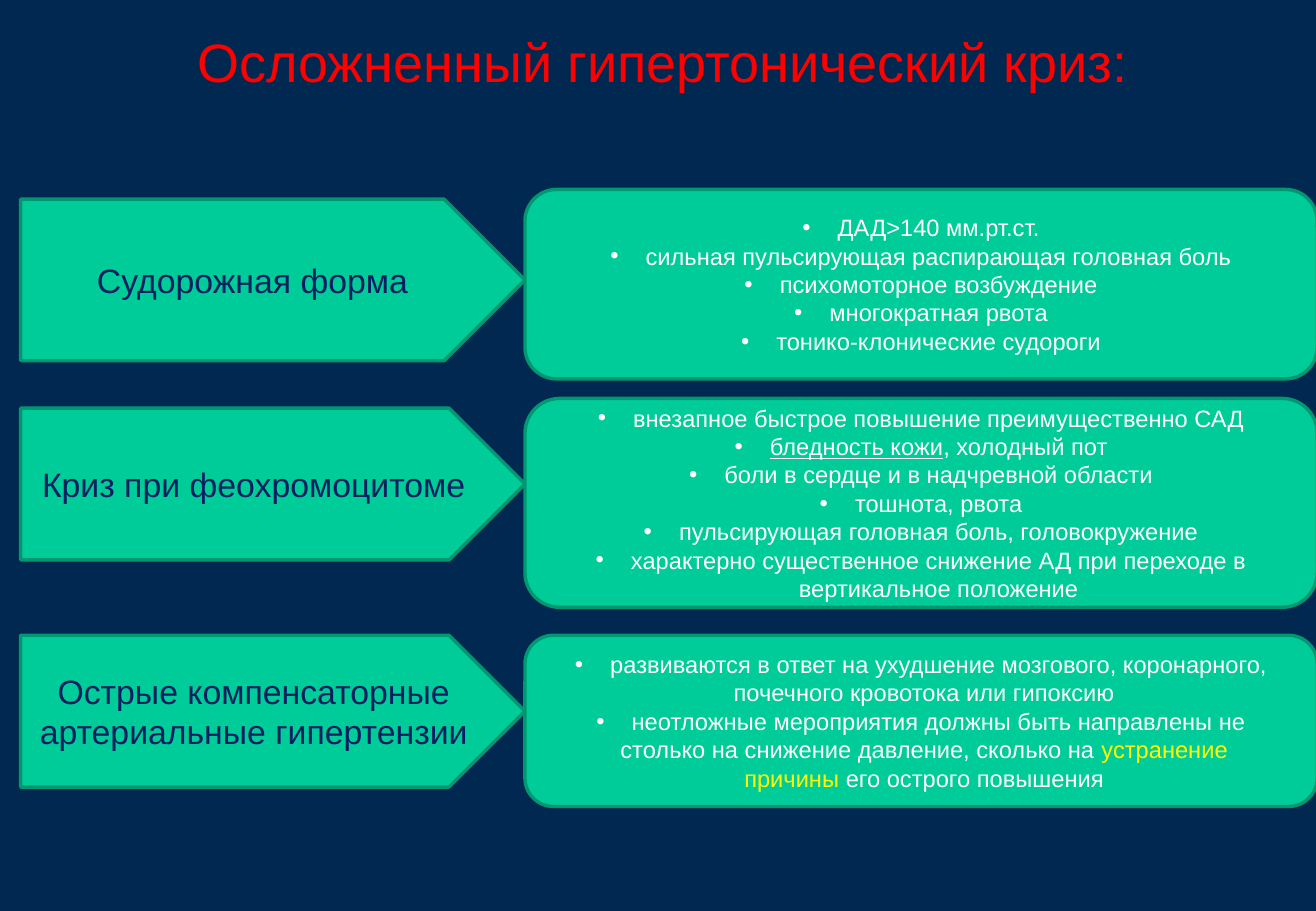
from dataclasses import dataclass

from lxml import etree
from pptx import Presentation
from pptx.dml.color import RGBColor
from pptx.enum.shapes import MSO_SHAPE
from pptx.enum.text import MSO_ANCHOR, PP_ALIGN
from pptx.oxml.ns import qn
from pptx.util import Inches, Pt

PENTAGON = MSO_SHAPE.PENTAGON
ROUNDED = MSO_SHAPE.ROUNDED_RECTANGLE
MIDDLE = MSO_ANCHOR.MIDDLE
CENTER = PP_ALIGN.CENTER

COLORS = {
    "background": "002850",
    "title": "FF0000",
    "fill": "00CC99",
    "outline": "009771",
    "label": "002060",
    "detail": "FFFFFF",
    "accent": "FFFF00",
}
FONT = "Arial"
LABEL_LEFT, LABEL_WIDTH = 0.17, 4.15
DETAIL_LEFT, DETAIL_WIDTH = LABEL_LEFT + LABEL_WIDTH, 6.52
BULLET_INDENT, CONTINUED_INDENT = 0.29, 0.05


@dataclass(frozen=True)
class Span:
    text: str
    color: str = "detail"
    underline: bool = False


@dataclass(frozen=True)
class Line:
    spans: tuple[Span, ...]
    bullet: bool = True


@dataclass(frozen=True)
class CrisisForm:
    name: str
    label_top: float
    label_height: float
    detail_top: float
    detail_height: float
    lines: tuple[Line, ...]


def plain(text: str, bullet: bool = True) -> Line:
    return Line((Span(text),), bullet)


FORMS = (
    CrisisForm("Судорожная форма", 1.64, 1.33, 1.56, 1.56, (
        plain("ДАД>140 мм.рт.ст."),
        plain("сильная пульсирующая распирающая головная боль"),
        plain("психомоторное возбуждение"),
        plain("многократная рвота"),
        plain("тонико-клонические судороги"),
    )),
    CrisisForm("Криз при феохромоцитоме", 3.36, 1.25, 3.28, 1.72, (
        plain("внезапное быстрое повышение преимущественно САД"),
        Line((Span("бледность кожи", underline=True), Span(", холодный пот"))),
        plain("боли в сердце и в надчревной области"),
        plain("тошнота, рвота"),
        plain("пульсирующая головная боль, головокружение"),
        plain("характерно существенное снижение АД при переходе в вертикальное положение"),
    )),
    CrisisForm("Острые компенсаторные артериальные гипертензии", 5.23, 1.25, 5.23, 1.41, (
        plain("развиваются в ответ на ухудшение мозгового, коронарного,"),
        plain("почечного кровотока или гипоксию", bullet=False),
        plain("неотложные мероприятия должны быть направлены не"),
        Line((Span("столько на снижение давление, сколько на "),
              Span("устранение", "accent")), bullet=False),
        Line((Span("причины", "accent"), Span(" его острого повышения")), bullet=False),
    )),
)


def rgb(name: str) -> RGBColor:
    return RGBColor.from_string(COLORS[name])


def add_text(para, text: str, *, size: float, color: str, underline: bool = False) -> None:
    para.alignment = CENTER
    run = para.add_run()
    run.text = text
    run.font.name = FONT
    run.font.size = Pt(size)
    run.font.color.rgb = rgb(color)
    if underline:
        run.font.underline = True


def set_indent(para, bullet: bool) -> None:
    properties = para._p.get_or_add_pPr()
    margin = BULLET_INDENT if bullet else CONTINUED_INDENT
    properties.set("marL", str(Inches(margin)))
    properties.set("indent", str(-Inches(margin) if bullet else 0))
    if bullet:
        etree.SubElement(properties, qn("a:buFont")).set("typeface", FONT)
        etree.SubElement(properties, qn("a:buChar")).set("char", "•")


def add_box(page, kind, left: float, top: float, width: float, height: float):
    box = page.shapes.add_shape(kind, Inches(left), Inches(top), Inches(width), Inches(height))
    box.shadow.inherit = False
    box.fill.solid()
    box.fill.fore_color.rgb = rgb("fill")
    box.line.color.rgb = rgb("outline")
    box.line.width = Pt(2)
    box.text_frame.word_wrap = True
    box.text_frame.vertical_anchor = MIDDLE
    return box


def add_form(page, form: CrisisForm) -> None:
    label = add_box(page, PENTAGON, LABEL_LEFT, form.label_top, LABEL_WIDTH, form.label_height)
    add_text(label.text_frame.paragraphs[0], form.name, size=20, color="label")

    detail = add_box(page, ROUNDED, DETAIL_LEFT, form.detail_top, DETAIL_WIDTH, form.detail_height)
    frame = detail.text_frame
    for index, line in enumerate(form.lines):
        para = frame.add_paragraph() if index else frame.paragraphs[0]
        set_indent(para, line.bullet)
        for span in line.spans:
            add_text(para, span.text, size=14, color=span.color, underline=span.underline)


def add_title(page, text: str) -> None:
    title = page.shapes.add_textbox(Inches(0.25), Inches(0.23), Inches(10.41), Inches(0.55))
    title.text_frame.word_wrap = True
    title.text_frame.vertical_anchor = MIDDLE
    add_text(title.text_frame.paragraphs[0], text, size=32, color="title")


def main() -> None:
    deck = Presentation()
    deck.slide_width, deck.slide_height = Inches(10.83), Inches(7.5)
    page = deck.slides.add_slide(deck.slide_layouts[6])
    page.background.fill.solid()
    page.background.fill.fore_color.rgb = rgb("background")

    # Heading
    add_title(page, "Осложненный гипертонический криз:")

    # Crisis forms with their signs
    for form in FORMS:
        add_form(page, form)

    deck.save("out.pptx")


if __name__ == "__main__":
    main()
